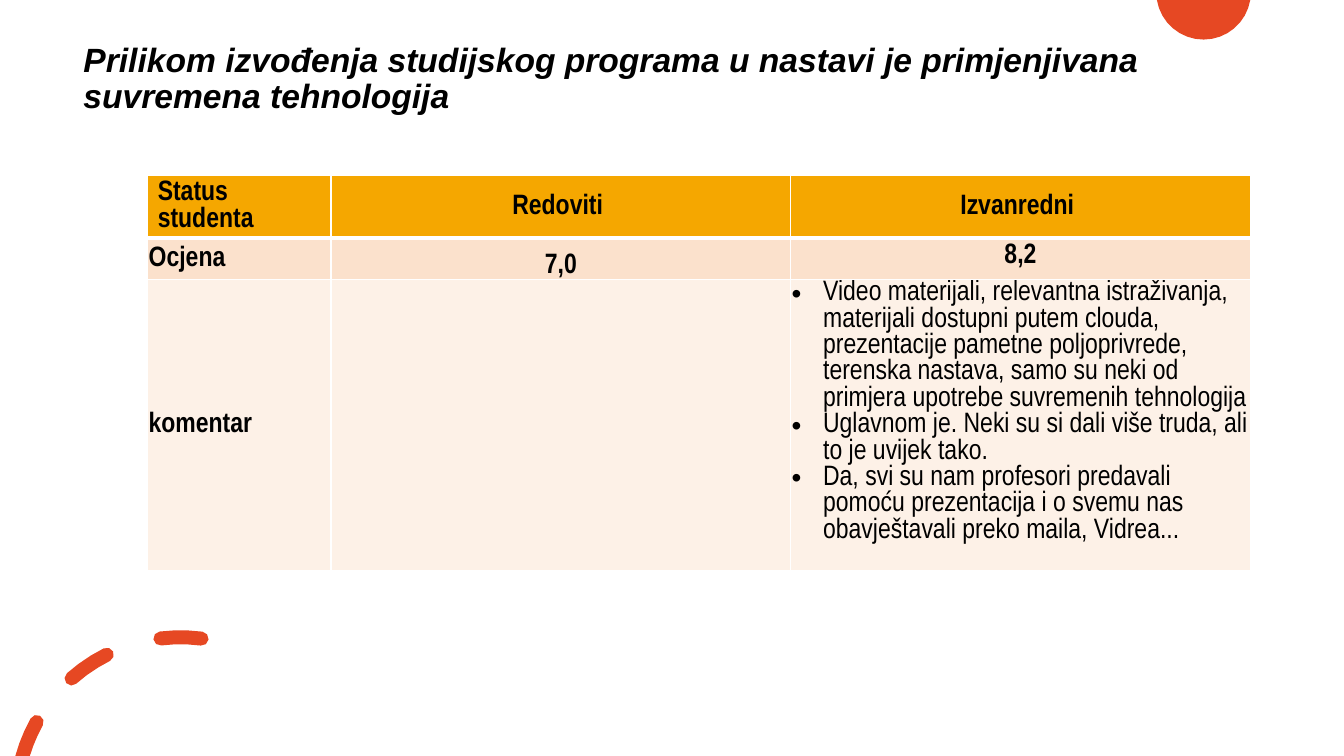
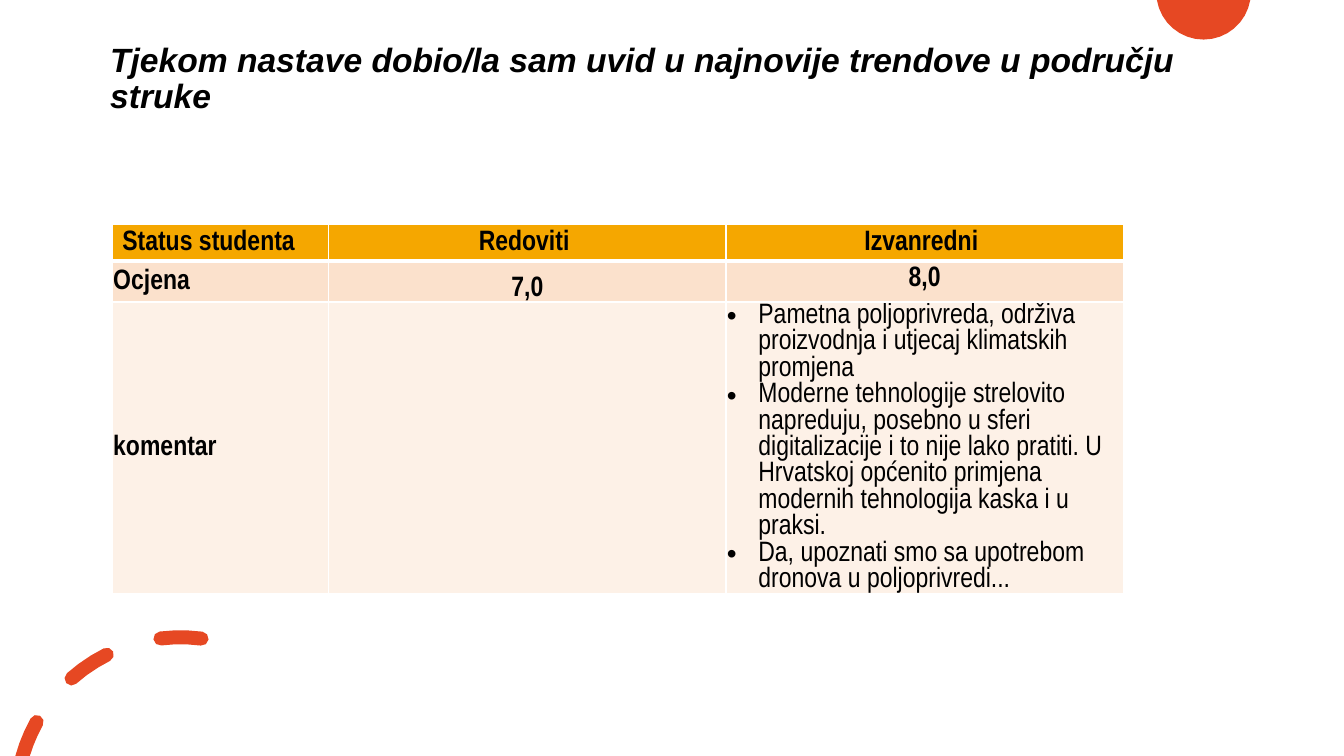
from math import cos, radians, sin

from pptx import Presentation
from pptx.dml.color import RGBColor
from pptx.enum.text import MSO_ANCHOR, MSO_AUTO_SIZE, PP_ALIGN
from pptx.oxml.ns import qn
from pptx.util import Pt
from lxml.etree import SubElement

WIDE, HIGH = 960, 540
HUES = {"ink": "000000", "red": "E64823", "head": "F5A700",
        "grade": "FBE1CC", "note": "FDF1E7", "rule": "FFFFFF"}


def write(frame, text, font="Arial Narrow", size=20, bold=True, slant=False,
          align=PP_ALIGN.LEFT, pitch=None, dots=False):
    for n, line in enumerate(text.split("\n")):
        para = frame.add_paragraph() if n else frame.paragraphs[0]
        para.alignment = align
        if pitch:
            para.line_spacing = pitch
        if dots:
            props = para._p.get_or_add_pPr()
            props.set("marL", str(Pt(22.5)))
            props.set("indent", str(-Pt(22.5)))
            SubElement(props, qn("a:buFont")).set("typeface", "Arial")
            SubElement(props, qn("a:buChar")).set("char", "•")
        run = para.add_run()
        run.text = line
        run.font.name = font
        run.font.size = Pt(size)
        run.font.bold = bold
        run.font.italic = slant
        run.font.color.rgb = RGBColor.from_string(HUES["ink"])


def arc(mid, radius, start, end, steps):
    turns = [radians(start + (end - start) * n / steps) for n in range(steps + 1)]
    return [(mid[0] + radius * sin(t), mid[1] - radius * cos(t)) for t in turns]


deck = Presentation()
deck.slide_width, deck.slide_height = Pt(WIDE), Pt(HIGH)
layout = deck.slide_layouts[5]

pages = [
    {"title": "Prilikom izvođenja studijskog programa u nastavi je primjenjivana "
              "suvremena tehnologija",
     "left": 52.4, "place": (105.5, 125.3), "cols": (131, 328.3, 328.3),
     "rows": (44.4, 29.3, 208), "grade": "8,2",
     "notes": "Video materijali, relevantna istraživanja, materijali dostupni putem "
              "clouda, prezentacije pametne poljoprivrede, terenska nastava, samo su "
              "neki od primjera upotrebe suvremenih tehnologija\n"
              "Uglavnom je. Neki su si dali više truda, ali to je uvijek tako.\n"
              "Da, svi su nam profesori predavali pomoću prezentacija i o svemu nas "
              "obavještavali preko maila, Vidrea..."},
    {"title": "Tjekom nastave dobio/la sam uvid u najnovije trendove u području struke",
     "left": 71.5, "place": (80.2, 160.4), "cols": (154.6, 283.8, 283.8),
     "rows": (26, 29.3, 208), "grade": "8,0",
     "notes": "Pametna poljoprivreda, održiva proizvodnja i utjecaj klimatskih promjena\n"
              "Moderne tehnologije strelovito napreduju, posebno u sferi digitalizacije "
              "i to nije lako pratiti. U Hrvatskoj općenito primjena modernih "
              "tehnologija kaska i u praksi.\n"
              "Da, upoznati smo sa upotrebom dronova u poljoprivredi..."},
]
slides = [deck.slides.add_slide(layout) for page in pages]

hub, ring, half = (128.9, 572.6), 117.4, 5
dashes = []
for outer, inner, end in [(-74.6, -73.2, -61), (-41.5, -41.5, -26.6), (-7, -7, 7.4)]:
    tip = arc(hub, ring, inner, end, 1)
    dash = (arc(hub, ring + half, outer, end, 3)
            + arc(tip[1], half, end, end + 180, 4)[1:-1]
            + arc(hub, ring - half, end, inner, 3))
    if outer == inner:
        dash += arc(tip[0], half, inner + 180, inner + 360, 4)[1:-1]
    dashes.append(dash)

for parts in ([arc((859.7, -5.5), 33.8, 99.4, 260.6, 16)], dashes):
    pen = None
    for part in parts:
        spots = [(Pt(x), Pt(y)) for x, y in part]
        if pen:
            pen.move_to(*spots[0])
        else:
            pen = slides[0].shapes.build_freeform(*spots[0])
        pen.add_line_segments(spots[1:], close=True)
    shape = pen.convert_to_shape()
    shape.shadow.inherit = False
    shape.fill.solid()
    shape.fill.fore_color.rgb = RGBColor.from_string(HUES["red"])
    shape.line.fill.background()
    layout.shapes.element.append(shape.element)

mid, low, top = MSO_ANCHOR.MIDDLE, MSO_ANCHOR.BOTTOM, MSO_ANCHOR.TOP
core, flush = PP_ALIGN.CENTER, PP_ALIGN.LEFT

for slide, page in zip(slides, pages):
    title = slide.shapes.title
    title.left, title.top = Pt(page["left"]), Pt(16.2)
    title.width, title.height = Pt(900 - page["left"]), Pt(81.4)
    frame = title.text_frame
    frame.word_wrap = True
    frame.auto_size = MSO_AUTO_SIZE.NONE
    frame.vertical_anchor = mid
    write(frame, page["title"], font="Arial", size=24, slant=True, pitch=0.9)

    x, y = page["place"]
    table = slide.shapes.add_table(3, 3, Pt(x), Pt(y), Pt(sum(page["cols"])),
                                   Pt(sum(page["rows"]))).table
    for col, width in zip(table.columns, page["cols"]):
        col.width = Pt(width)
    for row, height in zip(table.rows, page["rows"]):
        row.height = Pt(height)

    grid = [
        ("head", [("Status studenta", mid, flush, False),
                  ("Redoviti ", mid, core, False),
                  ("Izvanredni ", mid, core, False)]),
        ("grade", [("Ocjena", mid, flush, True),
                   ("7,0", low, core, True),
                   (page["grade"], top, core, False)]),
        ("note", [("komentar", mid, flush, True),
                  ("", top, flush, False),
                  (page["notes"], top, flush, True)]),
    ]
    for r, (hue, items) in enumerate(grid):
        for c, (text, anchor, align, tight) in enumerate(items):
            cell = table.cell(r, c)
            props = cell._tc.get_or_add_tcPr()
            for side in "LRTB":
                thick = (r, side) in [(0, "B"), (1, "T")]
                edge = SubElement(props, qn("a:ln" + side))
                edge.set("w", str(Pt(3 if thick else 1)))
                fill = SubElement(edge, qn("a:solidFill"))
                SubElement(fill, qn("a:srgbClr")).set("val", HUES["rule"])
            cell.fill.solid()
            cell.fill.fore_color.rgb = RGBColor.from_string(HUES[hue])
            cell.vertical_anchor = anchor
            if tight:
                cell.margin_left = cell.margin_right = cell.margin_top = Pt(0.7)
                cell.margin_bottom = 0
            if text:
                notes = (r, c) == (2, 2)
                write(cell.text_frame, text, align=align, bold=not notes, dots=notes)

deck.save("out.pptx")
